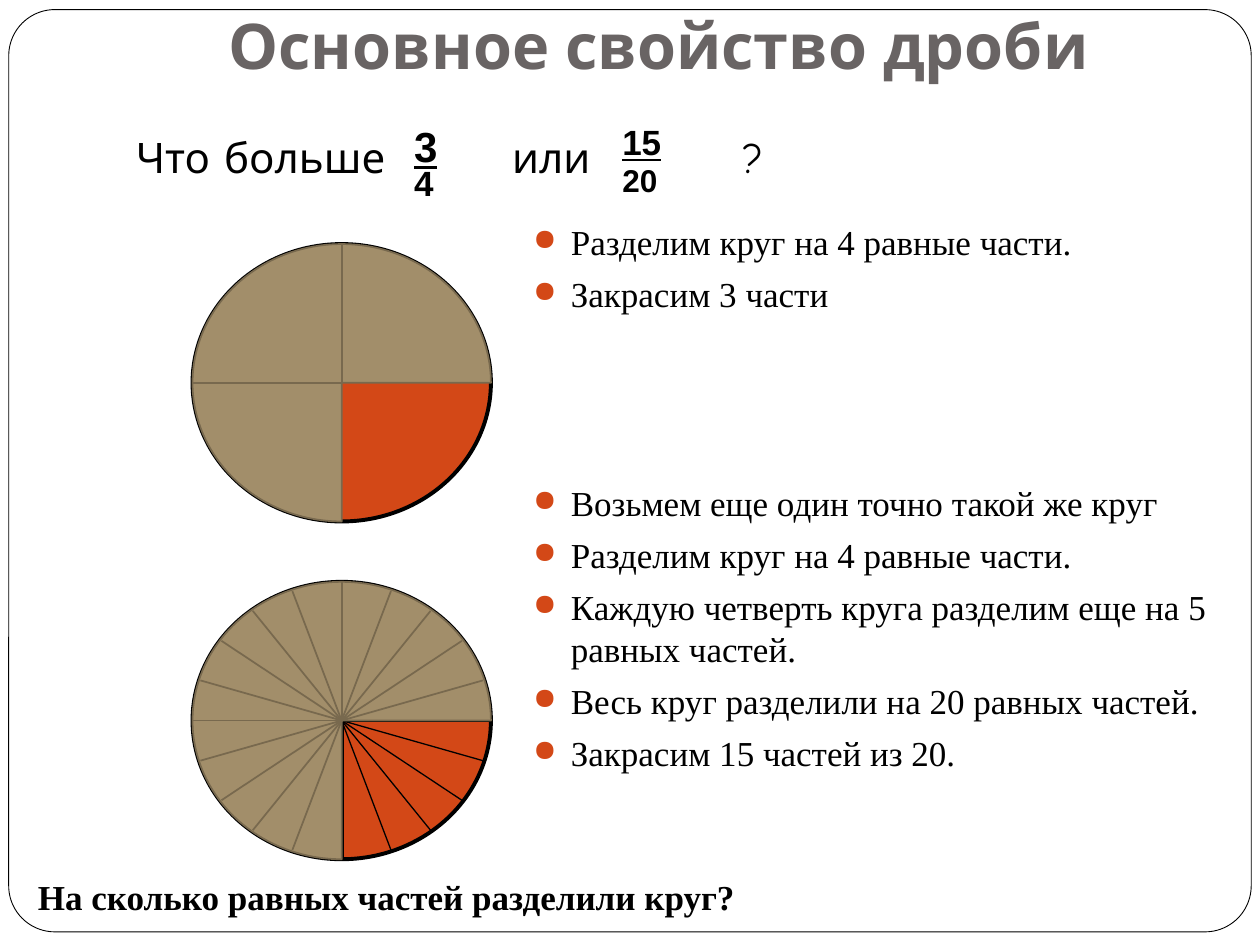
from dataclasses import dataclass
from math import cos, radians, sin

from lxml import etree
from pptx import Presentation
from pptx.dml.color import RGBColor
from pptx.enum import shapes, text
from pptx.oxml import ns
from pptx.util import Pt


@dataclass(frozen=True)
class Theme:
    ink: str = "000000"
    heading: str = "696464"
    accent: str = "D34817"
    shaded: str = "A28E6A"
    divider: str = "78694E"
    title_font: str = "Karla"
    question_font: str = "Comic Neue"
    number_font: str = "Arial"
    body_font: str = "Times New Roman"
    title_size: float = 36
    large: float = 24
    body_size: float = 20
    small: float = 18
    bullet_gap: float = 5.8
    section_gap: float = 95


THEME = Theme()
SPOKE_ANGLES = (17, 35.5, 53, 70.5)
STEPS_FOUR = ("Разделим круг на 4 равные части.", "Закрасим 3 части")
STEPS_TWENTY = (
    "Возьмем еще один точно такой же круг",
    "Разделим круг на 4 равные части.",
    "Каждую четверть круга разделим еще на 5 равных частей.",
    "Весь круг разделили на 20 равных частей.",
    "Закрасим 15 частей из 20.",
)


def style(paragraph, font, size, color=THEME.ink, bold=False, underline=False):
    for run in paragraph.runs:
        run.font.name = font
        run.font.size = Pt(size)
        run.font.bold = bold
        run.font.underline = underline
        run.font.color.rgb = RGBColor.from_string(color)


def add_label(slide, box, words, font, size, **look):
    label = slide.shapes.add_textbox(*map(Pt, box)).text_frame
    label.word_wrap = True
    label.text = words
    style(label.paragraphs[0], font, size, **look)


def outline(shape, color, width):
    shape.line.color.rgb = RGBColor.from_string(color)
    shape.line.width = Pt(width)


def add_outlined(slide, preset, box, fill, line, width):
    shape = slide.shapes.add_shape(preset, *map(Pt, box))
    shape.shadow.inherit = False
    if fill:
        shape.fill.solid()
        shape.fill.fore_color.rgb = RGBColor.from_string(fill)
    else:
        shape.fill.background()
    outline(shape, line, width)
    return shape


def add_radius(slide, box, angle, color, width, reach=1):
    left, top, across, down = box
    x, y = left + across / 2, top + down / 2
    end_x = x + reach * across / 2 * cos(radians(angle))
    end_y = y + reach * down / 2 * sin(radians(angle))
    radius = slide.shapes.add_connector(
        shapes.MSO_CONNECTOR.STRAIGHT, Pt(x), Pt(y), Pt(end_x), Pt(end_y))
    outline(radius, color, width)
    etree.SubElement(radius._element.spPr, ns.qn("a:effectLst"))


def add_frame(slide, box):
    frame = add_outlined(slide, shapes.MSO_SHAPE.ROUNDED_RECTANGLE,
                         box, None, THEME.ink, 0.5)
    frame.adjustments[0] = 0.05


def add_title(slide, box):
    title = slide.shapes.title
    title.left, title.top, title.width, title.height = map(Pt, box)
    heading = title.text_frame
    heading.text = "Основное свойство дроби"
    heading.vertical_anchor = text.MSO_ANCHOR.BOTTOM
    heading.margin_bottom = Pt(7.2)
    heading.paragraphs[0].alignment = text.PP_ALIGN.CENTER
    style(heading.paragraphs[0], THEME.title_font, THEME.title_size,
          THEME.heading, bold=True)


def add_fraction(slide, box, numerator, denominator, top_size, bottom_size):
    left, top, width, height = box
    add_label(slide, (left, top, width, height / 2), numerator,
              THEME.number_font, top_size, bold=True, underline=True)
    add_label(slide, (left, top + 23, width, height / 2), denominator,
              THEME.number_font, bottom_size, bold=True)


def add_question(slide, box):
    left, top, width, height = box
    for words, offset, span in (("Что больше", 0, 170), ("или", 215, 70), ("?", 347, 33)):
        add_label(slide, (left + offset, top + 6, span, 36), words,
                  THEME.question_font, THEME.large)
    add_fraction(slide, (left + 159, top, 28.5, height), "3", "4",
                 THEME.large, THEME.body_size)
    add_fraction(slide, (left + 278, top, 40, height), "15", "20",
                 THEME.body_size, THEME.small)


def add_steps(slide, box):
    steps = slide.shapes.add_textbox(*map(Pt, box)).text_frame
    steps.word_wrap = True
    steps.text = "\n".join(STEPS_FOUR + STEPS_TWENTY)
    for index, step in enumerate(steps.paragraphs):
        starts_section = index == len(STEPS_FOUR)
        step.space_before = Pt(THEME.section_gap if starts_section else THEME.bullet_gap)
        style(step, THEME.body_font, THEME.body_size)
        properties = step._p.get_or_add_pPr()
        properties.set("marL", str(Pt(21.6)))
        properties.set("indent", str(-Pt(21.6)))
        color = etree.SubElement(properties, ns.qn("a:buClr"))
        etree.SubElement(color, ns.qn("a:srgbClr"), val=THEME.accent)
        etree.SubElement(properties, ns.qn("a:buSzPct"), val="85000")
        etree.SubElement(properties, ns.qn("a:buChar"), char="●")


def add_fraction_circle(slide, box, spokes, axis_width):
    add_outlined(slide, shapes.MSO_SHAPE.OVAL, box, THEME.accent, THEME.ink, 2.25)
    for angle in (0, 90):
        add_radius(slide, box, angle, THEME.ink, axis_width)
    for angle in spokes:
        add_radius(slide, box, angle, THEME.ink, 0.75, reach=0.99)
    three_quarters = add_outlined(slide, shapes.MSO_SHAPE.PIE, box,
                                  THEME.shaded, THEME.divider, 1)
    three_quarters.adjustments[0] = 54
    three_quarters.adjustments[1] = 0
    for angle in (180, 270):
        add_radius(slide, box, angle, THEME.divider, 1)
    for spoke in spokes:
        for angle in (180 - spoke, 180 + spoke, 360 - spoke):
            add_radius(slide, box, angle, THEME.divider, 1, reach=0.99)


def main():
    deck = Presentation()
    deck.slide_width, deck.slide_height = Pt(720), Pt(540)
    slide = deck.slides.add_slide(deck.slide_layouts[5])
    add_frame(slide, (5, 5.5, 710, 527))
    add_title(slide, (70.5, 26, 612, 28))
    add_steps(slide, (297.5, 122.5, 402.5, 391))
    add_fraction_circle(slide, (110, 139.5, 170.5, 158.5), (), 0.75)
    add_question(slide, (70.5, 65.5, 380, 54))
    add_fraction_circle(slide, (110, 332.5, 170.5, 158.5), SPOKE_ANGLES, 2.25)
    add_label(slide, (14.5, 497, 425.5, 31), "На сколько равных частей разделили круг?",
              THEME.body_font, THEME.body_size, bold=True)
    deck.save("out.pptx")


if __name__ == "__main__":
    main()
